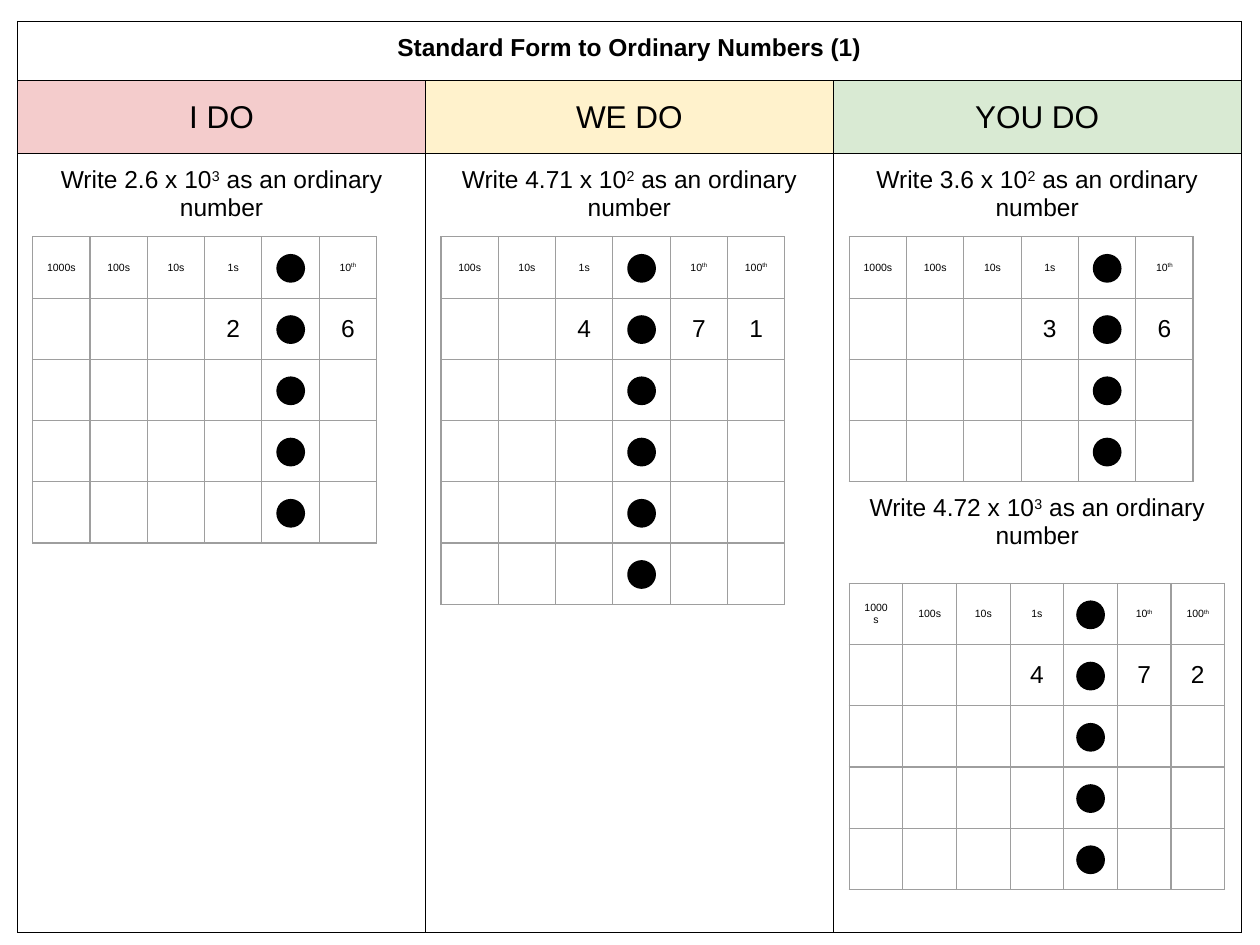
from lxml import etree
from pptx import Presentation
from pptx.dml.color import RGBColor
from pptx.enum.shapes import MSO_SHAPE
from pptx.enum.text import MSO_ANCHOR, PP_ALIGN
from pptx.oxml.ns import qn
from pptx.util import Inches, Pt

OVAL = MSO_SHAPE.OVAL
CENTER = PP_ALIGN.CENTER
TOP, MIDDLE = MSO_ANCHOR.TOP, MSO_ANCHOR.MIDDLE

THEME = {
    "font": "Arial", "ink": "000000", "frame": "000000", "grid": "9E9E9E",
    "border": 0.75, "title": 14, "heading": 18, "body": 14, "place": 6,
}

TITLE = "Standard Form to Ordinary Numbers (1)"
STAGES = [
    ("I DO", "F4CCCC", ["Write 2.6 x 10^3^ as an ordinary number"]),
    ("WE DO", "FFF2CC", ["Write 4.71 x 10^2^ as an ordinary number"]),
    ("YOU DO", "D9EAD3", ["Write 3.6 x 10^2^ as an ordinary number",
                          "Write 4.72 x 10^3^ as an ordinary number"]),
]
POINT = "."
TENTH, HUNDREDTH = "10^th^", "100^th^"
PLACE_GRIDS = [
    {"left": 0.26, "top": 1.88, "width": 2.73, "rows": 5,
     "places": ["1000s", "100s", "10s", "1s", POINT, TENTH],
     "digits": ["", "", "", "2", POINT, "6"]},
    {"left": 3.5, "top": 1.88, "width": 2.73, "rows": 6,
     "places": ["100s", "10s", "1s", POINT, TENTH, HUNDREDTH],
     "digits": ["", "", "4", POINT, "7", "1"]},
    {"left": 6.74, "top": 1.88, "width": 2.73, "rows": 4,
     "places": ["1000s", "100s", "10s", "1s", POINT, TENTH],
     "digits": ["", "", "", "3", POINT, "6"]},
    {"left": 6.74, "top": 4.63, "width": 2.98, "rows": 5,
     "places": ["1000s", "100s", "10s", "1s", POINT, TENTH, HUNDREDTH],
     "digits": ["", "", "", "4", POINT, "7", "2"]},
]

FRAME_LEFT, FRAME_TOP, FRAME_WIDTH = 0.14, 0.17, 9.71
FRAME_ROWS = [0.47, 0.58, 6.18]
FRAME_INSET = 0.1
GRID_ROW = 0.486
DOT, DOT_DROP = 0.2, 0.15
QUESTION_GAP = 156


def add_grid(slide, left, top, width, column_count, row_heights, line_color):
    table = slide.shapes.add_table(
        len(row_heights), column_count, Inches(left), Inches(top),
        Inches(width), Inches(sum(row_heights))).table
    table.first_row = False
    table.horz_banding = False
    for column in table.columns:
        column.width = Inches(width / column_count)
    for row, height in zip(table.rows, row_heights):
        row.height = Inches(height)
    for cell in table.iter_cells():
        properties = cell._tc.get_or_add_tcPr()
        for side in ("a:lnL", "a:lnR", "a:lnT", "a:lnB"):
            line = etree.SubElement(properties, qn(side), w=str(Pt(THEME["border"])))
            fill = etree.SubElement(line, qn("a:solidFill"))
            etree.SubElement(fill, qn("a:srgbClr"), val=line_color)
        cell.fill.background()
    return table


def write(cell, lines, size, anchor=MIDDLE, bold=False, gap=0):
    cell.vertical_anchor = anchor
    frame = cell.text_frame
    for index, text in enumerate(lines):
        paragraph = frame.add_paragraph() if index else frame.paragraphs[0]
        paragraph.alignment = CENTER
        if index:
            paragraph.space_before = Pt(gap)
        for part, words in enumerate(text.split("^")):
            if not words:
                continue
            run = paragraph.add_run()
            run.text = words
            run.font.name = THEME["font"]
            run.font.size = Pt(size)
            run.font.bold = bold
            run.font.color.rgb = RGBColor.from_string(THEME["ink"])
            if part % 2:
                run._r.get_or_add_rPr().set("baseline", "30000")


def add_frame(slide):
    table = add_grid(slide, FRAME_LEFT, FRAME_TOP, FRAME_WIDTH, len(STAGES),
                     FRAME_ROWS, THEME["frame"])
    for cell in table.iter_cells():
        cell.margin_left = cell.margin_right = Inches(FRAME_INSET)
        cell.margin_top = cell.margin_bottom = Inches(FRAME_INSET)
    table.cell(0, 0).merge(table.cell(0, len(STAGES) - 1))
    write(table.cell(0, 0), [TITLE], THEME["title"], TOP, bold=True)
    for column, (stage, color, questions) in enumerate(STAGES):
        heading = table.cell(1, column)
        heading.fill.solid()
        heading.fill.fore_color.rgb = RGBColor.from_string(color)
        write(heading, [stage], THEME["heading"])
        write(table.cell(2, column), questions, THEME["body"], TOP, gap=QUESTION_GAP)


def add_place_grid(slide, left, top, width, rows, places, digits):
    table = add_grid(slide, left, top, width, len(places), [GRID_ROW] * rows, THEME["grid"])
    for row, (labels, size) in enumerate([(places, THEME["place"]), (digits, THEME["body"])]):
        for column, label in enumerate(labels):
            if label and label != POINT:
                write(table.cell(row, column), [label], size)
    dot_left = left + (places.index(POINT) + 0.5) * width / len(places) - DOT / 2
    for row in range(rows):
        dot = slide.shapes.add_shape(
            OVAL, Inches(dot_left), Inches(top + DOT_DROP + row * GRID_ROW),
            Inches(DOT), Inches(DOT))
        dot.shadow.inherit = False
        dot.fill.solid()
        dot.fill.fore_color.rgb = RGBColor.from_string(THEME["ink"])
        dot.line.color.rgb = RGBColor.from_string(THEME["ink"])
        dot.line.width = Pt(2)


def main():
    deck = Presentation()
    deck.slide_width, deck.slide_height = Inches(10), Inches(7.5)
    slide = deck.slides.add_slide(deck.slide_layouts[6])
    add_frame(slide)
    for grid in PLACE_GRIDS:
        add_place_grid(slide, **grid)
    deck.save("out.pptx")


if __name__ == "__main__":
    main()
